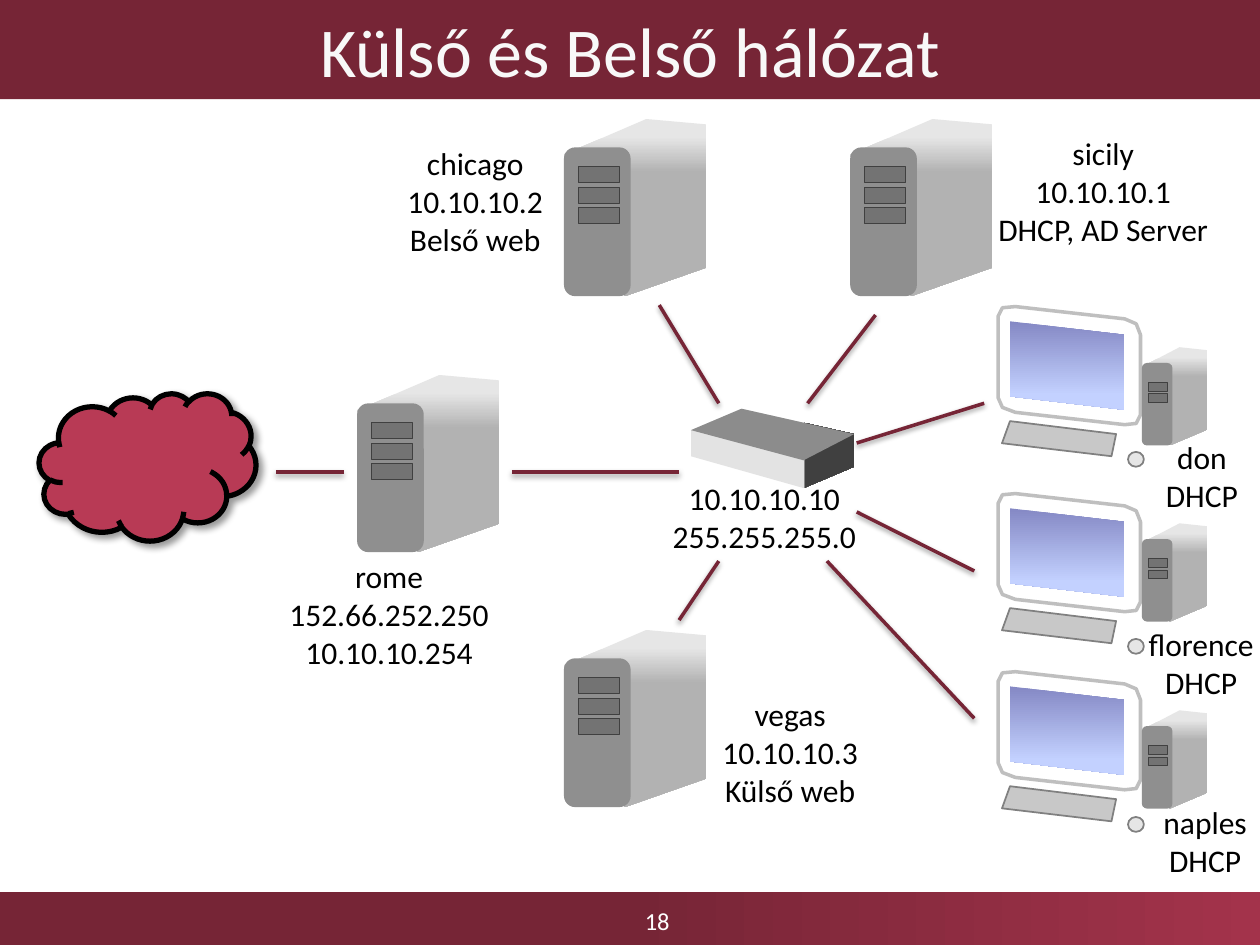
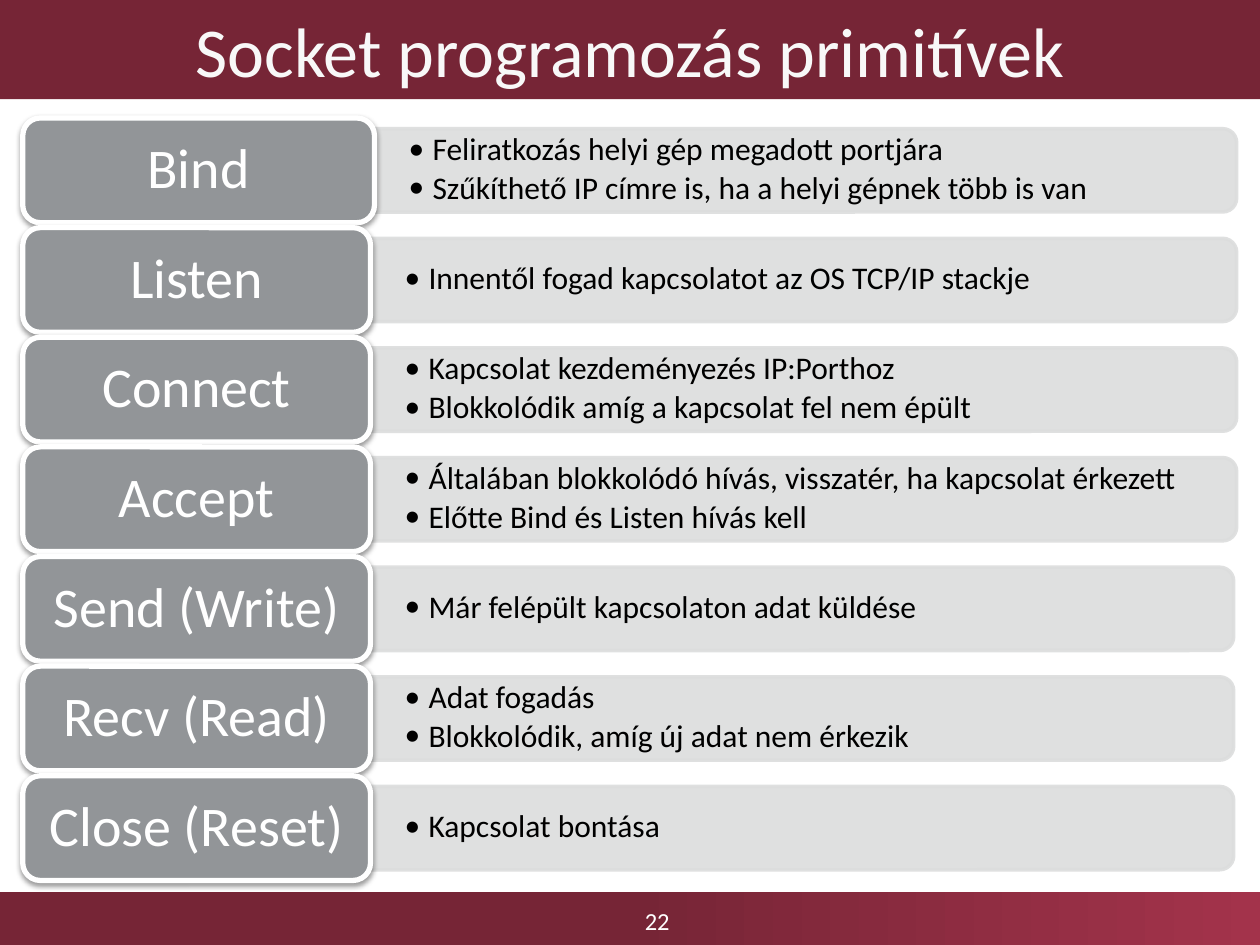
import pptx
import pptx.util
import pptx.dml.color
import pptx.enum.shapes
import pptx.enum.text
import lxml.etree

Cm = pptx.util.Cm
Pt = pptx.util.Pt
KIND = pptx.enum.shapes.MSO_SHAPE
ALIGN = pptx.enum.text.PP_ALIGN
MIDDLE = pptx.enum.text.MSO_ANCHOR.MIDDLE
FONT = "Calibri"
WINE, ROSE, CLOUD = "762536", "A3334B", "B83A55"
WHITE, BLACK, TITLE = "FFFFFF", "000000", "F8F8F8"
LABEL, BAND = "929598", "DCDDDD"
SOFT = (38, 3.1, 1.6, 90)
WIDE, TALL = 25.4, 19.05

SERVERS = [(7.2, 7.56), (11.37, 2.4), (17.14, 2.4), (11.37, 12.7)]
CLIENTS = [(6.13, 7.0), (9.9, 10.55), (13.49, 14.32)]
LINKS = [
    (5.56, 9.52, 6.93, 9.52), (10.32, 9.52, 13.69, 9.52),
    (13.29, 6.15, 14.49, 8.13), (17.65, 6.35, 16.28, 8.13),
    (17.27, 8.93, 19.84, 8.13), (17.27, 10.32, 19.64, 11.51),
    (16.67, 11.31, 19.64, 14.48), (13.69, 12.5, 14.49, 11.31),
]
NAMES = [
    (5.56, 11.11, 4.57, ["rome", "152.66.252.250", "10.10.10.254"]),
    (14.29, 13.89, 3.28, ["vegas", "10.10.10.3", "Külső web"]),
    (19.84, 2.58, 4.8, ["sicily", "10.10.10.1", "DHCP, AD Server"]),
    (7.94, 2.78, 3.28, ["chicago", "10.10.10.2", "Belső web"]),
    (22.88, 12.47, 2.67, ["florence", "DHCP"]),
    (23.24, 8.7, 1.98, ["don", "DHCP"]),
    (23.19, 16.07, 2.21, ["naples", "DHCP"]),
    (13.29, 9.53, 4.24, ["10.10.10.10", "255.255.255.0"]),
]
CALLS = [
    ("Bind", ["Feliratkozás helyi gép megadott portjára",
              "Szűkíthető IP címre is, ha a helyi gépnek több is van"]),
    ("Listen", ["Innentől fogad kapcsolatot az OS TCP/IP stackje"]),
    ("Connect", ["Kapcsolat kezdeményezés IP:Porthoz",
                 "Blokkolódik amíg a kapcsolat fel nem épült"]),
    ("Accept", ["Általában blokkolódó hívás, visszatér, ha kapcsolat érkezett",
                "Előtte Bind és Listen hívás kell"]),
    ("Send (Write)", ["Már felépült kapcsolaton adat küldése"]),
    ("Recv (Read)", ["Adat fogadás", "Blokkolódik, amíg új adat nem érkezik"]),
    ("Close (Reset)", ["Kapcsolat bontása"]),
]


def color(text):
    """Turn a hex string into a colour."""
    return pptx.dml.color.RGBColor.from_string(text)


def node(base, tag, **attrs):
    """Add a drawing element under base."""
    name = pptx.oxml.ns.qn("a:" + tag)
    return lxml.etree.SubElement(base, name, {k: str(v) for k, v in attrs.items()})


def shade(shape, alpha, blur, dist, turn):
    """Give a shape or connector an outer shadow."""
    props = shape.element.spPr
    effects = props.find(pptx.oxml.ns.qn("a:effectLst"))
    if effects is None:
        effects = node(props, "effectLst")
    outer = node(effects, "outerShdw", blurRad=Pt(blur), dist=Pt(dist),
                 dir=turn * 60000, rotWithShape=0)
    node(node(outer, "srgbClr", val=BLACK), "alpha", val=alpha * 1000)


def paint(shape, fill, line=None, width=1):
    """Set a plain or gradient fill and an optional outline."""
    shape.shadow.inherit = False
    if isinstance(fill, str):
        shape.fill.solid()
        shape.fill.fore_color.rgb = color(fill)
    else:
        angle, *stops = fill
        shape.fill.gradient()
        shape.fill.gradient_angle = angle
        for stop, (place, tint) in zip(shape.fill.gradient_stops, stops):
            stop.position = place
            stop.color.rgb = color(tint)
    if line:
        shape.line.color.rgb = color(line)
        shape.line.width = Pt(width)
    else:
        shape.line.fill.background()
    return shape


def block(slide, kind, box, fill, line=None, width=1):
    """Add a painted preset shape."""
    shape = slide.shapes.add_shape(kind, *map(Cm, box))
    return paint(shape, fill, line, width)


def poly(slide, box, points, fill, line=None, width=1):
    """Draw a polygon given in fractions of a box."""
    left, top, wide, high = box
    spots = [(Cm(left + x * wide), Cm(top + y * high)) for x, y in points]
    pen = slide.shapes.build_freeform(*spots[0])
    pen.add_line_segments(spots[1:], close=True)
    return paint(pen.convert_to_shape(), fill, line, width)


def write(shape, lines, size, tint, align=ALIGN.CENTER, bullet=False, wrap=True):
    """Write one paragraph for each line."""
    frame = shape.text_frame
    frame.word_wrap = wrap
    frame.text = "\n".join(lines)
    for para in frame.paragraphs:
        para.alignment = align
        if bullet:
            props = para._p.get_or_add_pPr()
            props.set("marL", str(Cm(0.48)))
            props.set("indent", str(-Cm(0.48)))
            node(props, "buFont", typeface=FONT)
            node(props, "buChar", char="•")
            para.line_spacing = 0.9
            para.space_after = Pt(2.7)
        para.font.name = FONT
        para.font.size = Pt(size)
        para.font.color.rgb = color(tint)
    return frame


def inset(frame, side, edge):
    """Set the margins and centre the text upright."""
    frame.margin_left = frame.margin_right = Cm(side)
    frame.margin_top = frame.margin_bottom = Cm(edge)
    frame.vertical_anchor = MIDDLE


def page(deck, title, number):
    """Start a slide with its title band and footer."""
    slide = deck.slides.add_slide(deck.slide_layouts[6])
    block(slide, KIND.RECTANGLE, (0, 17.98, WIDE, 1.07),
          (0, (0.5, WINE), (1, ROSE)))
    foot = slide.shapes.add_textbox(*map(Cm, (9.12, 18.06, 8.26, 0.99)))
    write(foot, [number], 14, WHITE).vertical_anchor = MIDDLE
    head = block(slide, KIND.RECTANGLE, (0, 0, WIDE, 2), WINE)
    inset(write(head, [title], 40, TITLE), 0.25, 0.13)
    return slide


def tower(slide, box, slots, first):
    """Draw a computer case with its drive slots."""
    left, top, wide, high = box
    poly(slide, box, [(0, 0.2), (0.58, 0), (1, 0.03), (1, 0.84), (0.43, 1)],
         (270, (0.1, "E6E6E6"), (0.3, "B2B2B2")))
    block(slide, KIND.ROUNDED_RECTANGLE,
          (left, top + 0.16 * high, 0.47 * wide, 0.84 * high), "8F8F8F")
    for i in range(slots):
        block(slide, KIND.RECTANGLE,
              (left + 0.1 * wide, top + (first + 0.115 * i) * high,
               0.29 * wide, 0.09 * high), "737373", "404040", 0.5)


def client(slide, box, case):
    """Draw a monitor, keyboard, mouse and case."""
    left, top, wide, high = box
    poly(slide, box,
         [(0, 0.1), (0.03, 0.03), (0.12, 0.02), (0.88, 0.12), (0.96, 0.16),
          (0.99, 0.25), (0.99, 0.9), (0.96, 0.97), (0.88, 0.98),
          (0.12, 0.88), (0.03, 0.84), (0, 0.76)], WHITE, "BFBFBF", 2)
    poly(slide, box, [(0.08, 0.14), (0.88, 0.25), (0.88, 0.86), (0.08, 0.75)],
         (270, (0, "8488C4"), (0.83, "C3D1FF")))
    poly(slide, (left + 0.08, top + 2.36, 2.3, 0.77),
         [(0.07, 0), (1, 0.34), (0.96, 0.92), (0, 0.58)], "C8C8C8", "808080")
    block(slide, KIND.OVAL, (left + 2.62, top + 2.98, 0.32, 0.3),
          "E6E6E6", "808080")
    tower(slide, (left + wide, case, 1.31, 1.98), 2, 0.36)


def switch(slide, box):
    """Draw the network switch."""
    back, right, front, left = (0.31, 0), (1, 0.32), (0.69, 0.65), (0, 0.27)
    poly(slide, box, [left, back, right, (1, 0.73), (0.69, 1), (0, 0.6)],
         (0, (0.69, "E3E3E3"), (0.7, "404040")))
    poly(slide, box, [left, back, right, front], "8C8C8C")


def network(slide):
    """Draw the machines, links and names of the network."""
    cloud = block(slide, KIND.CLOUD, (0.79, 7.93, 4.37, 2.97), CLOUD, BLACK, 3)
    shade(cloud, 40, 4, 3, 45)
    for spot in SERVERS:
        tower(slide, (*spot, 2.86, 3.57), 3, 0.27)
    for top, case in CLIENTS:
        client(slide, (20.12, top, 2.9, 2.48), case)
    switch(slide, (13.93, 8.24, 3.29, 1.6))
    for ends in LINKS:
        link = slide.shapes.add_connector(
            pptx.enum.shapes.MSO_CONNECTOR.STRAIGHT, *map(Cm, ends))
        link.line.color.rgb = color(WINE)
        link.line.width = Pt(2)
        shade(link, *SOFT)
    for left, top, wide, lines in NAMES:
        high = 0.25 + 0.77 * len(lines)
        name = slide.shapes.add_textbox(*map(Cm, (left, top, wide, high)))
        write(name, lines, 18, BLACK, wrap=False)


def call(slide, box, split, name, notes):
    """Draw one labelled row with its notes."""
    left, top, wide, high = box
    thick, edge = 1.68, 0.1
    span = wide - split
    mid = left + split + span / 2
    band = block(slide, KIND.ROUND_2_SAME_RECTANGLE,
                 (mid - thick / 2, top + (high - span) / 2, thick, span),
                 BAND, BAND, 2)
    band.rotation = 90
    for tint in band.element.spPr.iter(pptx.oxml.ns.qn("a:srgbClr")):
        node(tint, "alpha", val=90000)
    text = slide.shapes.add_textbox(
        *map(Cm, (left + split, top + 0.28, span - 0.08, 1.52)))
    inset(write(text, notes, 18, BLACK, ALIGN.LEFT, True), 0.69, 0.36)
    label = block(slide, KIND.ROUNDED_RECTANGLE, (left, top, split, high),
                  LABEL, WHITE, 3)
    shade(label, *SOFT)
    word = slide.shapes.add_textbox(
        *map(Cm, (left + edge, top + edge, split - 2 * edge, high - 2 * edge)))
    frame = write(word, [name], 32, WHITE)
    frame.paragraphs[0].line_spacing = 0.9
    inset(frame, 0.33, 0.18)


def main():
    """Build both slides and save them."""
    deck = pptx.Presentation()
    deck.slide_width, deck.slide_height = Cm(WIDE), Cm(TALL)
    network(page(deck, "Külső és Belső hálózat", "18"))
    slide = page(deck, "Socket programozás primitívek", "22")
    for i, (name, notes) in enumerate(CALLS):
        split = 7.01 if i else 7.09
        wide = 24.47 if i < 4 else 24.41
        call(slide, (0.46, 2.38 + 2.21 * i, wide, 2.11), split, name, notes)
    deck.save("out.pptx")


if __name__ == "__main__":
    main()
